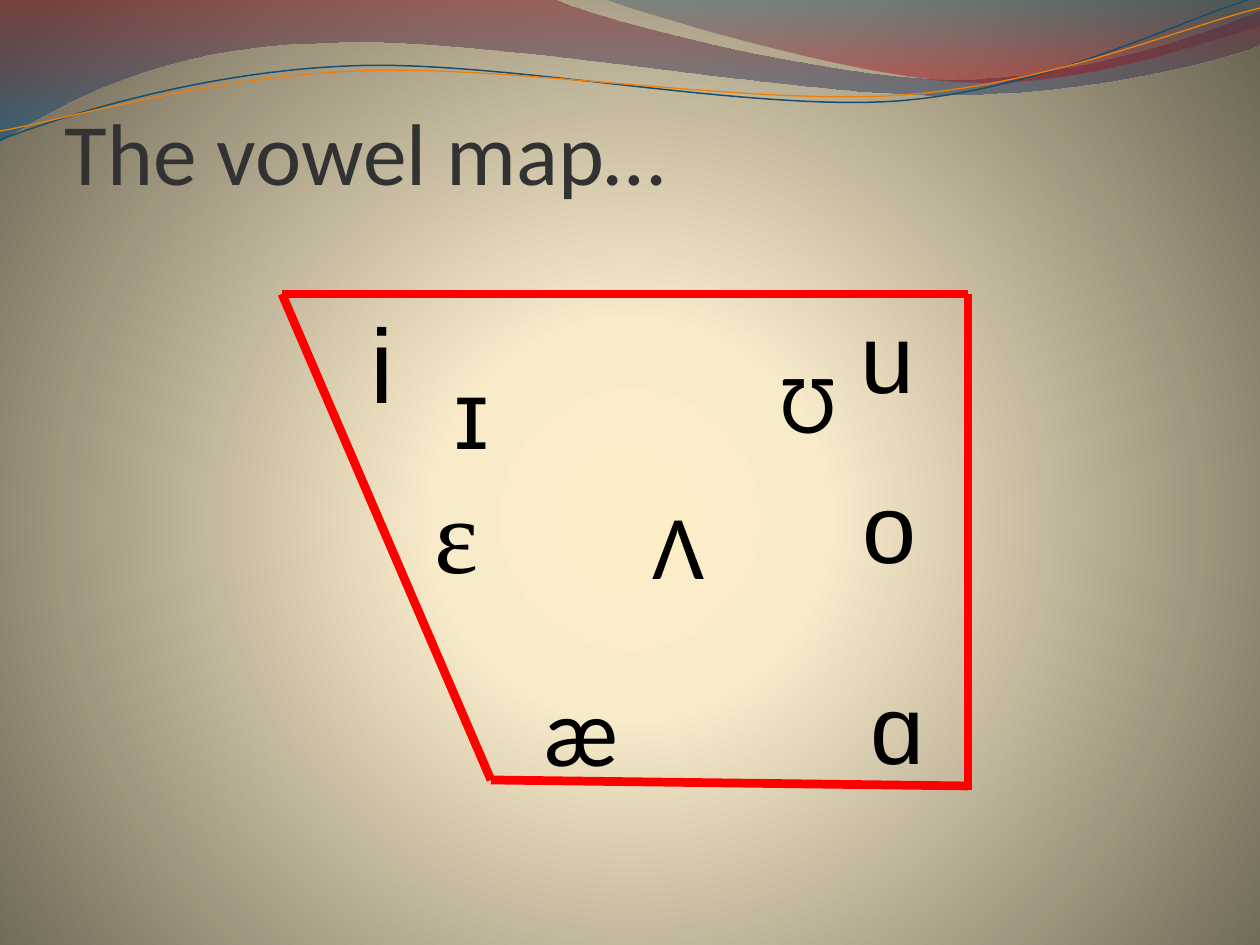
from math import cos, radians, sin

from lxml import etree
from pptx import Presentation
from pptx.dml.color import RGBColor
from pptx.enum.shapes import MSO_CONNECTOR
from pptx.enum.text import MSO_ANCHOR, MSO_AUTO_SIZE, PP_ALIGN
from pptx.oxml import parse_xml
from pptx.oxml.ns import nsdecls, qn
from pptx.util import Pt

SCALE = 914400 / 126
WIDTH, HEIGHT = 1260, 945
TITLE_ONLY = 5
STRAIGHT = MSO_CONNECTOR.STRAIGHT
BOTTOM, TOP = MSO_ANCHOR.BOTTOM, MSO_ANCHOR.TOP
LEFT, CENTER = PP_ALIGN.LEFT, PP_ALIGN.CENTER

DOWNWARD = '<a:lin ang="5400000" scaled="0"/>'
RADIAL = ('<a:path path="circle"><a:fillToRect l="10000" t="110000" '
          'r="10000" b="100000"/></a:path>')
BACKGROUND_STOPS = [(0, "FEEEC7", 100), (25, "F8EBCA", 100), (100, "6C6553", 100)]

# Each segment lists one point for a straight step or three for a Bézier curve.
RIBBONS = [
    ([[(0, 0)], [(554, -1)],
      [(600, 21), (837, 79), (955, 79)], [(1075, 79), (1207, 33), (1260, 11)],
      [(1261, 45)],
      [(1239, 55), (1096, 96), (940, 95)], [(784, 95), (481, 35), (324, 43)],
      [(163, 45), (58, 105), (-1, 142)], [(0, 0)]],
     [(0, "7E1621", 45), (100, "005689", 55)]),
    ([[(604, -1)],
      [(641, 14), (859, 78), (969, 82)], [(1079, 87), (1211, 40), (1260, 26)],
      [(1260, 0)], [(604, -1)]],
     [(0, "094467", 30), (80, "A10F1F", 45)]),
]
STRAND_TILT = -2.7
STRANDS = [
    ([[(0, 140)], [(60, 117), (199, 72), (349, 66)],
      [(498, 59), (747, 112), (898, 101)], [(1050, 89), (1182, 19), (1257, -3)]],
     (629, 72), "184E6D", 0.85),
    ([[(0, 131)], [(59, 121), (207, 77), (357, 71)],
      [(508, 64), (752, 106), (903, 95)], [(1053, 84), (1185, 26), (1260, 8)]],
     (629, 74), "F07F09", 0.75),
]

MAP_BOX = (282, 294, 686, 496)
MAP_EDGES = [((0, 0), (209, 486)), ((0, 0), (686, 0)),
             ((209, 486), (686, 492)), ((686, 0), (686, 496))]
# Symbol, box within the map, font, size, line spacing
VOWELS = [
    ("ɑ", (546, 367, 139, 118), "Arial", 55.5, None),
    ("i", (21, 13, 159, 136), "Arial", 60, 0.9),
    ("u", (536, 9, 139, 118), "Arial", 55.5, 0.9),
    ("ε", (109, 168, 131, 126), "Times New Roman", 60.1, None),
    ("o", (547, 189, 121, 116), "Arial", 55.5, 0.8),
    ("ɪ", (129, 52, 121, 116), "Arial", 55.5, None),
    ("æ", (239, 369, 121, 116), "Calibri", 55.5, None),
    ("Λ", (336, 188, 121, 116), "Calibri", 52, None),
    ("Ʊ", (466, 49, 121, 116), "Calibri", 48, None),
]


def px(value):
    return round(value * SCALE)


def color(hex_value):
    return RGBColor.from_string(hex_value)


def apply_format(target, values):
    for name, value in values.items():
        setattr(target, name, value)


def set_gradient(fill, element, stops, direction):
    """Swap a solid fill of the element for a gradient."""
    fill.solid()
    fill.fore_color.rgb = color("FFFFFF")
    stop_xml = ""
    for position, hex_value, opacity in stops:
        alpha = f'<a:alpha val="{opacity * 1000}"/>' if opacity < 100 else ""
        stop_xml += (f'<a:gs pos="{position * 1000}"><a:srgbClr val="{hex_value}">'
                     f'{alpha}</a:srgbClr></a:gs>')
    gradient = parse_xml(f'<a:gradFill {nsdecls("a")} rotWithShape="1">'
                         f'<a:gsLst>{stop_xml}</a:gsLst>{direction}</a:gradFill>')
    solid = element.find(".//" + qn("a:solidFill"))
    solid.getparent().replace(solid, gradient)


def rotate(point, center, degrees):
    angle = radians(degrees)
    x, y = point[0] - center[0], point[1] - center[1]
    return (center[0] + x * cos(angle) - y * sin(angle),
            center[1] + x * sin(angle) + y * cos(angle))


def add_curve(slide, segments, left, top, close):
    """Draw the outline, merging the three steps of each curve into one Bézier."""
    points = [(px(left + x), px(top + y)) for segment in segments for x, y in segment]
    builder = slide.shapes.build_freeform(*points[0])
    builder.add_line_segments(points[1:], close=False)
    shape = builder.convert_to_shape()
    shape.shadow.inherit = False
    outline = shape._element.find(".//" + qn("a:path"))
    steps = iter(outline.findall(qn("a:lnTo")))
    for segment in segments[1:]:
        segment_steps = [next(steps) for _ in segment]
        if len(segment) == 3:
            curve = etree.Element(qn("a:cubicBezTo"))
            segment_steps[0].addprevious(curve)
            for step in segment_steps:
                curve.append(step[0])
                outline.remove(step)
    if close:
        etree.SubElement(outline, qn("a:close"))
    return shape


def add_waves(slide, left, top):
    for segments, stops in RIBBONS:
        ribbon = add_curve(slide, segments, left, top, True)
        set_gradient(ribbon.fill, ribbon._element, stops, DOWNWARD)
        ribbon.line.fill.background()
    for segments, center, hex_value, width in STRANDS:
        level = [[rotate(point, center, -STRAND_TILT) for point in segment]
                 for segment in segments]
        strand = add_curve(slide, level, left, top, False)
        strand.rotation = STRAND_TILT
        strand.fill.background()
        strand.line.color.rgb = color(hex_value)
        strand.line.width = Pt(width)


def write_text(frame, text, frame_format, alignment, font_format, hex_value):
    apply_format(frame, {"word_wrap": True, "auto_size": MSO_AUTO_SIZE.NONE, **frame_format})
    paragraph = frame.paragraphs[0]
    paragraph.alignment = alignment
    run = paragraph.add_run()
    run.text = text
    apply_format(run.font, font_format)
    run.font.color.rgb = color(hex_value)
    return paragraph


def place_title(slide, left, top, width, height):
    title = slide.shapes.title
    apply_format(title, {"left": px(left), "top": px(top),
                         "width": px(width), "height": px(height)})
    margins = {"margin_left": 0, "margin_top": px(6), "margin_right": 0, "margin_bottom": 0}
    write_text(title.text_frame, "The vowel map…", {"vertical_anchor": BOTTOM, **margins},
               LEFT, {"name": "Calibri", "size": Pt(50)}, "323232")
    slide.shapes._spTree.append(title._element)  # in front of the waves


def add_edge(slide, start, end):
    edge = slide.shapes.add_connector(STRAIGHT, *map(px, (*start, *end)))
    edge.line.color.rgb = color("FF0000")
    edge.line.width = Pt(5)
    etree.SubElement(edge._element.spPr, qn("a:effectLst"))


def add_vowel(slide, symbol, box, font, size, line_spacing):
    shape = slide.shapes.add_textbox(*map(px, box))
    paragraph = write_text(shape.text_frame, symbol, {"vertical_anchor": TOP}, CENTER,
                           {"name": font, "size": Pt(size)}, "000000")
    if line_spacing:
        paragraph.line_spacing = line_spacing
    properties = paragraph._p.get_or_add_pPr()
    properties.set("marL", str(px(38)))
    properties.set("indent", str(px(-38)))
    space_before = etree.SubElement(properties, qn("a:spcBef"))
    etree.SubElement(space_before, qn("a:spcPct"), val="20000")


def add_vowel_map(slide, left, top, width, height):
    for start, end in MAP_EDGES:
        add_edge(slide, *((left + x * width / MAP_BOX[2], top + y * height / MAP_BOX[3])
                          for x, y in (start, end)))
    for symbol, (x, y, box_width, box_height), font, size, line_spacing in VOWELS:
        add_vowel(slide, symbol, (left + x, top + y, box_width, box_height),
                  font, size, line_spacing)


def main():
    presentation = Presentation()
    presentation.slide_width, presentation.slide_height = px(WIDTH), px(HEIGHT)
    slide = presentation.slides.add_slide(presentation.slide_layouts[TITLE_ONLY])
    set_gradient(slide.background.fill, slide._element, BACKGROUND_STOPS, RADIAL)
    add_waves(slide, 0, 0)
    place_title(slide, 65, 45, 1134, 158)
    add_vowel_map(slide, *MAP_BOX)
    presentation.save("out.pptx")


if __name__ == "__main__":
    main()
